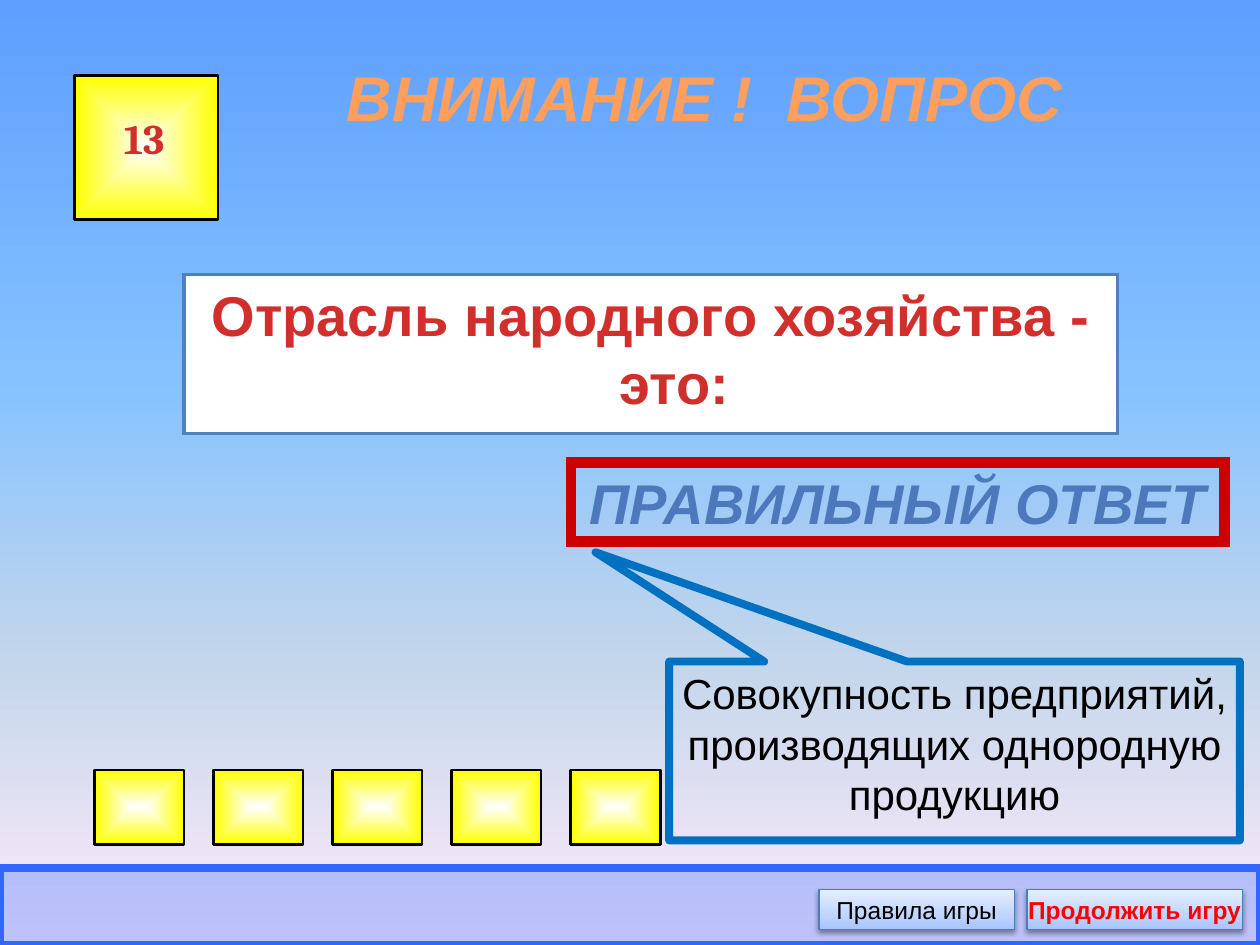
"""Build the quiz slide for question 13 with its answer callout and navigation buttons."""
from lxml.etree import SubElement
from pptx import Presentation
from pptx.dml.color import RGBColor
from pptx.enum.shapes import MSO_SHAPE
from pptx.enum.text import MSO_ANCHOR, MSO_AUTO_SIZE, PP_ALIGN
from pptx.oxml.ns import qn
from pptx.util import Inches, Pt

TITLE = "ВНИМАНИЕ !  ВОПРОС"
NUMBER = "13"
QUESTION = "Отрасль народного хозяйства - это:"
ANSWER_LABEL = "ПРАВИЛЬНЫЙ ОТВЕТ"
ANSWER = "Совокупность предприятий, производящих однородную продукцию"

BLACK = RGBColor(0x00, 0x00, 0x00)
WHITE = RGBColor(0xFF, 0xFF, 0xFF)
YELLOW = RGBColor(0xFF, 0xFF, 0x00)
RED = RGBColor(0xFF, 0x00, 0x00)
ORANGE = RGBColor(0xFF, 0x9F, 0x5D)
QUESTION_RED = RGBColor(0xD0, 0x2F, 0x2C)
FRAME_RED = RGBColor(0xCC, 0x00, 0x00)
LABEL_BLUE = RGBColor(0x4D, 0x79, 0xBC)
QUESTION_BORDER = RGBColor(0x4F, 0x81, 0xBD)
CALLOUT_BLUE = RGBColor(0x00, 0x70, 0xC0)
BAR_BLUE = RGBColor(0x33, 0x66, 0xFF)
BUTTON_BORDER = RGBColor(0x4B, 0x7E, 0xBC)

SKY = [(0, RGBColor(0x5E, 0x9E, 0xFF)), (40, RGBColor(0x85, 0xC2, 0xFF)),
       (70, RGBColor(0xC4, 0xD6, 0xEB)), (100, RGBColor(0xFF, 0xEB, 0xFA))]
BUTTON_SHADES = [(0, RGBColor(0xA4, 0xC4, 0xFF)), (35, RGBColor(0xBF, 0xD4, 0xFF)),
                 (100, RGBColor(0xE6, 0xEE, 0xFF))]
GLOW = [(0, WHITE), (100, YELLOW)]

BUTTONS = [("Правила игры", 6.5, 1.55, BLACK, False),
           ("Продолжить игру", 8.15, 1.71, RED, True)]
NUMBER_TILE = (0.59, 0.6, 1.14, 1.14)
TILE_COUNT, TILE_LEFT, TILE_PITCH = 5, 0.75, 0.945


def place(part, box):
    part.left, part.top, part.width, part.height = map(Inches, box)


def write(part, text, size, color, bold=False, italic=False, font="Arial",
          anchor=MSO_ANCHOR.MIDDLE, wrap=True):
    frame = part.text_frame
    frame.text = text
    frame.word_wrap = wrap
    frame.auto_size = MSO_AUTO_SIZE.NONE
    frame.vertical_anchor = anchor
    paragraph = frame.paragraphs[0]
    paragraph.alignment = PP_ALIGN.CENTER
    style = paragraph.runs[0].font
    style.name, style.size, style.bold, style.italic = font, Pt(size), bold, italic
    style.color.rgb = color
    return paragraph


def shade(fill, owner, stops, angle=None):
    fill.gradient()
    gradient = next(owner.iter(qn("a:gradFill")))
    for child in list(gradient):
        gradient.remove(child)
    stop_list = SubElement(gradient, qn("a:gsLst"))
    for position, color in stops:
        stop = SubElement(stop_list, qn("a:gs"), pos=str(position * 1000))
        SubElement(stop, qn("a:srgbClr"), val=str(color))
    if angle is None:
        center = SubElement(gradient, qn("a:path"), path="rect")
        SubElement(center, qn("a:fillToRect"), l="50000", t="50000", r="50000", b="50000")
    else:
        SubElement(gradient, qn("a:lin"), ang=str(angle * 60000), scaled="0")


def add_box(kind, box, border, weight):
    part = slide.shapes.add_shape(kind, *map(Inches, box))
    part.shadow.inherit = False
    part.line.color.rgb = border
    part.line.width = Pt(weight)
    return part


def add_tile(box):
    tile = add_box(MSO_SHAPE.ACTION_BUTTON_CUSTOM, box, BLACK, 1.5)
    shade(tile.fill, tile.element, GLOW)


def miter(part):
    SubElement(part.element.spPr.find(qn("a:ln")), qn("a:miter"), lim="800000")


deck = Presentation()
deck.slide_width, deck.slide_height = Inches(10), Inches(7.5)
slide = deck.slides.add_slide(deck.slide_layouts[1])
shade(slide.background.fill, slide.element, SKY, 90)

title, question = slide.placeholders
place(title, (2.4, 0.3, 6.38, 0.93))
write(title, TITLE, 36, ORANGE, bold=True, italic=True)

place(question, (1.46, 2.18, 7.41, 1.26))
question.fill.solid()
question.fill.fore_color.rgb = WHITE
question.line.color.rgb = QUESTION_BORDER
question.line.width = Pt(2)
miter(question)
question_line = write(question, QUESTION, 32, QUESTION_RED, bold=True, anchor=MSO_ANCHOR.TOP)
indents = question_line._p.get_or_add_pPr()
indents.set("marL", str(Inches(0.38)))
indents.set("indent", str(-Inches(0.38)))
SubElement(indents, qn("a:buNone"))

add_tile(NUMBER_TILE)
number = slide.shapes.add_textbox(*map(Inches, (0.83, 0.84, 0.63, 0.63)))
write(number, NUMBER, 24, QUESTION_RED, bold=True, font="Cambria",
      anchor=MSO_ANCHOR.TOP, wrap=False)

for column in range(TILE_COUNT):
    add_tile((TILE_LEFT + column * TILE_PITCH, 6.11, 0.71, 0.59))

answer_label = add_box(MSO_SHAPE.RECTANGLE, (4.53, 3.67, 5.19, 0.63), FRAME_RED, 6)
answer_label.element.set("useBgFill", "1")
miter(answer_label)
write(answer_label, ANSWER_LABEL, 32, LABEL_BLUE, bold=True, italic=True, wrap=False)

answer = add_box(MSO_SHAPE.RECTANGULAR_CALLOUT, (5.31, 5.25, 4.53, 1.42), CALLOUT_BLUE, 4.5)
answer.element.set("useBgFill", "1")
answer.rotation = 180
answer.adjustments[0], answer.adjustments[1] = 0.629, 1.111
write(answer, ANSWER, 24, BLACK, anchor=MSO_ANCHOR.TOP)
answer.text_frame._txBody.bodyPr.set("rot", str(180 * 60000))

bar = add_box(MSO_SHAPE.RECTANGLE, (0, 6.89, 10, 0.61), BAR_BLUE, 4.5)
bar.fill.solid()
bar.fill.fore_color.rgb = BAR_BLUE
bar_color = bar.element.spPr.find(qn("a:solidFill")).find(qn("a:srgbClr"))
SubElement(bar_color, qn("a:alpha"), val="31000")
miter(bar)

for label, left, width, color, bold in BUTTONS:
    button = add_box(MSO_SHAPE.RECTANGLE, (left, 7.06, width, 0.32), BUTTON_BORDER, 0.75)
    shade(button.fill, button.element, BUTTON_SHADES, 270)
    write(button, label, 14, color, bold=bold, wrap=False)
    effects = button.element.spPr.find(qn("a:effectLst"))
    shadow = SubElement(effects, qn("a:outerShdw"), blurRad=str(Pt(3.1)), dist=str(Pt(1.6)),
                        dir=str(90 * 60000), rotWithShape="0")
    shadow_color = SubElement(shadow, qn("a:srgbClr"), val=str(BLACK))
    SubElement(shadow_color, qn("a:alpha"), val="38000")

deck.save("out.pptx")
